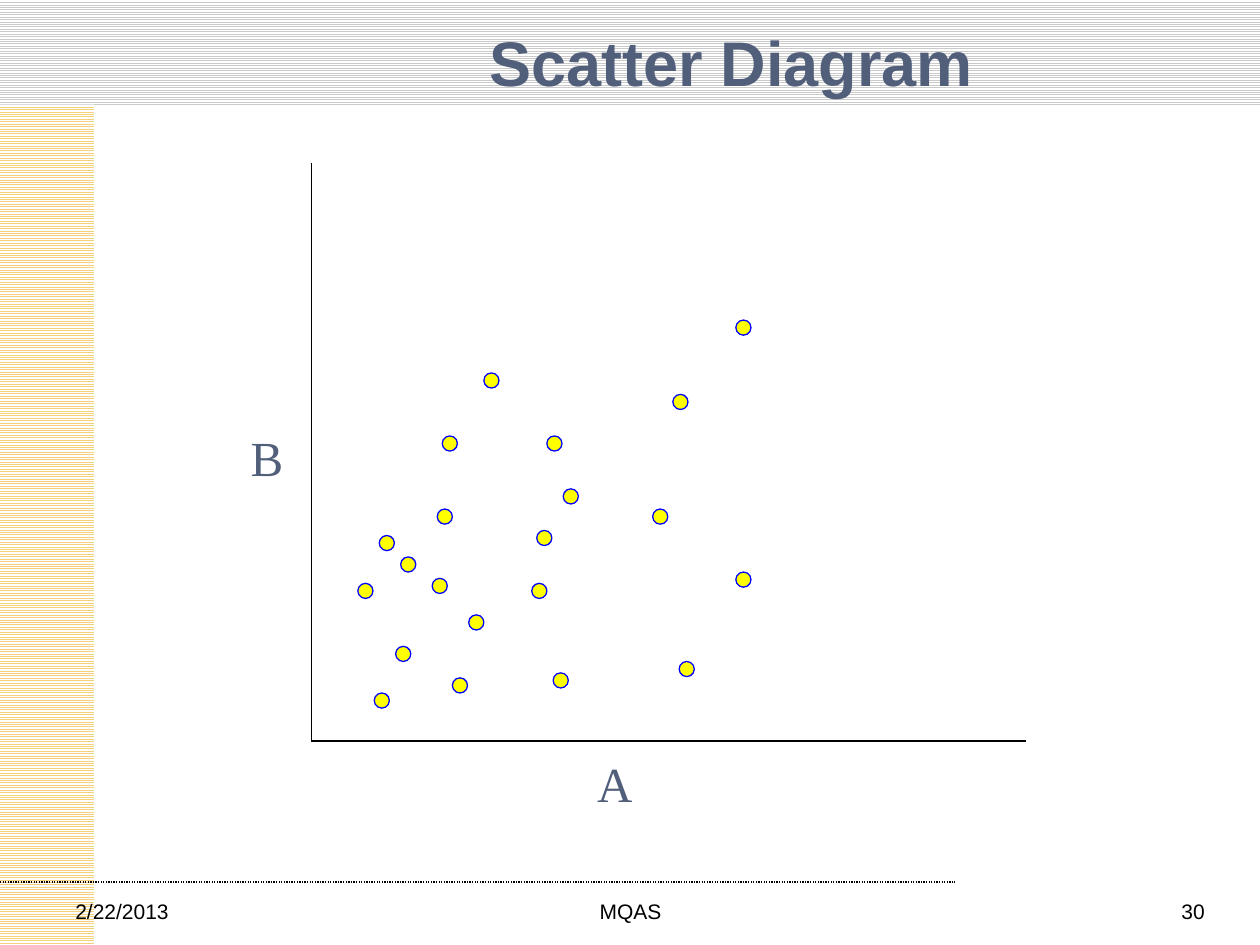
from dataclasses import dataclass

from lxml import etree
from pptx import Presentation
from pptx.dml.color import RGBColor
from pptx.enum.dml import MSO_LINE, MSO_PATTERN
from pptx.enum.shapes import MSO_CONNECTOR, MSO_SHAPE
from pptx.enum.text import MSO_ANCHOR, PP_ALIGN
from pptx.oxml.ns import qn
from pptx.util import Inches, Pt


@dataclass(frozen=True)
class Theme:
    slate: RGBColor = RGBColor(0x51, 0x5F, 0x7B)
    black: RGBColor = RGBColor(0, 0, 0)
    white: RGBColor = RGBColor(255, 255, 255)
    gray: RGBColor = RGBColor(0xCA, 0xCA, 0xCA)
    gold: RGBColor = RGBColor(0xF4, 0xD1, 0x7A)
    yellow: RGBColor = RGBColor(255, 255, 0)
    blue: RGBColor = RGBColor(0, 0, 255)
    sans: str = "Arial"
    serif: str = "Times New Roman"
    title_size: Pt = Pt(36)
    label_size: Pt = Pt(28)
    footer_size: Pt = Pt(12)
    hairline: Pt = Pt(0.75)


theme = Theme()
prs = Presentation()
prs.slide_width, prs.slide_height = Inches(10), Inches(7.5)
slide = prs.slides.add_slide(prs.slide_layouts[6])
shapes = slide.shapes


def add_text(text, box, size, font, color, align=PP_ALIGN.LEFT, top_inset=0.05):
    frame = shapes.add_textbox(*map(Inches, box)).text_frame
    frame.word_wrap = True
    frame.margin_top = Inches(top_inset)
    paragraph = frame.paragraphs[0]
    paragraph.text = text
    paragraph.alignment = align
    paragraph.font.size = size
    paragraph.font.name = font
    paragraph.font.color.rgb = color
    return frame


def add_line(*ends):
    line = shapes.add_connector(MSO_CONNECTOR.STRAIGHT, *map(Inches, ends))
    line.line.color.rgb = theme.black
    line.line.width = theme.hairline
    etree.SubElement(line._element.spPr, qn("a:effectLst"))
    return line


# Striped bands along the top and left edges
for band_box, stripe in [((0, 0, 10, 0.83), theme.gray),
                         ((0, 0.83, 0.75, 6.67), theme.gold)]:
    band = shapes.add_shape(MSO_SHAPE.RECTANGLE, *map(Inches, band_box))
    band.shadow.inherit = False
    band.fill.patterned()
    band.fill.pattern = MSO_PATTERN.LIGHT_HORIZONTAL
    band.fill.fore_color.rgb = stripe
    band.fill.back_color.rgb = theme.white
    band.line.fill.background()

# Footer rule and texts
footer_rule = add_line(0, 7, 7.58, 7)
footer_rule.line.dash_style = MSO_LINE.ROUND_DOT
for text, left, width, align in [("MQAS", 3.42, 3.17, PP_ALIGN.CENTER),
                                 ("30", 7.33, 2.33, PP_ALIGN.RIGHT),
                                 ("2/22/2013", 0.5, 2.33, PP_ALIGN.LEFT)]:
    add_text(text, (left, 7.08, width, 0.27), theme.footer_size, theme.sans,
             theme.black, align)

# Title
title = add_text("Scatter Diagram", (1.88, 0.13, 7.85, 0.71), theme.title_size,
                 theme.sans, theme.slate, PP_ALIGN.CENTER)
title.vertical_anchor = MSO_ANCHOR.MIDDLE
title.paragraphs[0].font.bold = True

# Axes meeting at the origin
origin_x, origin_y = 2.47, 5.88
add_line(origin_x, 1.29, origin_x, origin_y)
add_line(origin_x, origin_y, 8.14, origin_y)

# Axis labels
for text, box in [("A", (4.64, 5.88, 1, 0.57)), ("B", (1.89, 3.29, 0.75, 0.57))]:
    add_text(text, box, theme.label_size, theme.serif, theme.slate, top_inset=0.1)

# Scatter points, by left and top
dot_size = Inches(0.12)
points = [
    (2.84, 4.63), (3.01, 4.25), (3.18, 4.42), (3.43, 4.59), (3.51, 3.46),
    (3.84, 2.96), (4.34, 3.46), (4.26, 4.21), (4.22, 4.63), (5.39, 5.25),
    (4.39, 5.34), (4.47, 3.88), (5.34, 3.13), (5.18, 4.04), (5.84, 4.54),
    (3.47, 4.04), (3.59, 5.38), (2.97, 5.5), (3.14, 5.13), (3.72, 4.88),
    (5.84, 2.54),
]
for x, y in points:
    dot = shapes.add_shape(MSO_SHAPE.OVAL, Inches(x), Inches(y), dot_size, dot_size)
    dot.shadow.inherit = False
    dot.fill.solid()
    dot.fill.fore_color.rgb = theme.yellow
    dot.line.color.rgb = theme.blue
    dot.line.width = theme.hairline

prs.save("out.pptx")
